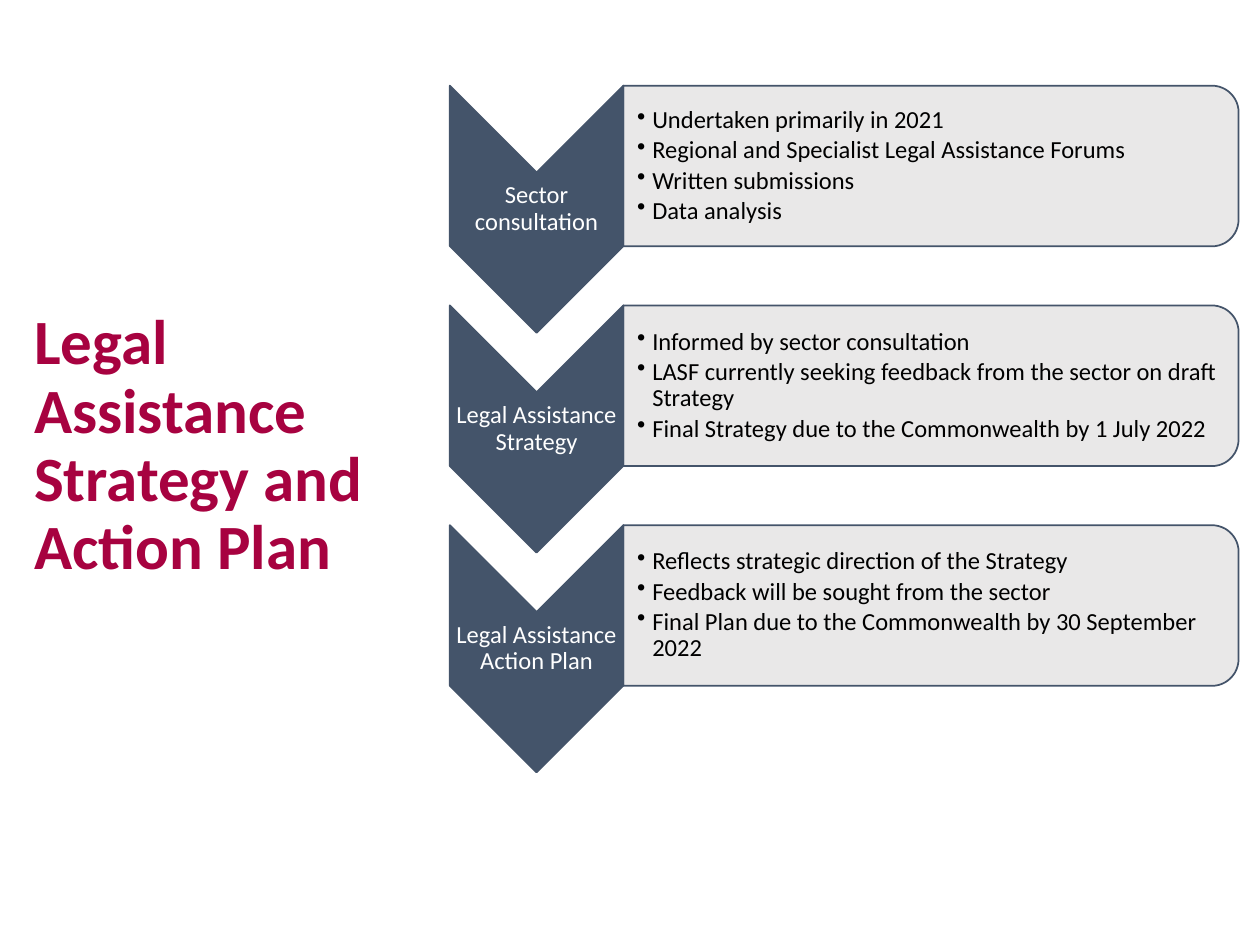
from collections import namedtuple

from lxml.etree import SubElement
from pptx import Presentation
from pptx.dml.color import RGBColor
from pptx.enum.shapes import MSO_SHAPE
from pptx.enum.text import MSO_ANCHOR, PP_ALIGN
from pptx.oxml.ns import qn
from pptx.util import Inches, Pt

COLORS = {
    "title": "A70240",
    "slate": "44546A",
    "panel": "E7E6E6",
    "label": "FFFFFF",
    "body": "000000",
}
FONT = "Calibri"
Box = namedtuple("Box", "left top width height")

STAGES = [
    ("Sector consultation", [
        "Undertaken primarily in 2021",
        "Regional and Specialist Legal Assistance Forums",
        "Written submissions",
        "Data analysis",
    ]),
    ("Legal Assistance Strategy", [
        "Informed by sector consultation",
        "LASF currently seeking feedback from the sector on draft Strategy",
        "Final Strategy due to the Commonwealth by 1 July 2022",
    ]),
    ("Legal Assistance Action Plan", [
        "Reflects strategic direction of the Strategy",
        "Feedback will be sought from the sector",
        "Final Plan due to the Commonwealth by 30 September 2022",
    ]),
]


def inches(box):
    return [Inches(length) for length in box]


def color(name):
    return RGBColor.from_string(COLORS[name])


def format_paragraph(paragraph, size, color_name, bold=False):
    paragraph.line_spacing = 0.9
    for run in paragraph.runs:
        run.font.name = FONT
        run.font.size = Pt(size)
        run.font.bold = bold
        run.font.color.rgb = color(color_name)


def add_quarter_turned(group, preset, box, fill_name):
    turned = Box(
        box.left + (box.width - box.height) / 2,
        box.top + (box.height - box.width) / 2,
        box.height,
        box.width,
    )
    outline = group.shapes.add_shape(preset, *inches(turned))
    outline.rotation = 90
    outline.shadow.inherit = False
    outline.fill.solid()
    outline.fill.fore_color.rgb = color(fill_name)
    outline.line.color.rgb = color("slate")
    outline.line.width = Pt(1)
    return outline


def add_text(group, box, lines, left_inset=0.01):
    frame = group.shapes.add_textbox(*inches(box)).text_frame
    frame.word_wrap = True
    frame.vertical_anchor = MSO_ANCHOR.MIDDLE
    frame.margin_left = Inches(left_inset)
    frame.margin_top = frame.margin_right = frame.margin_bottom = Inches(0.01)
    frame.text = "\n".join(lines)
    return frame.paragraphs


def add_stage_arrow(group, box, stage):
    add_quarter_turned(group, MSO_SHAPE.CHEVRON, box, "slate")
    label_box = box._replace(top=box.top + box.height * 0.35, height=box.height * 0.3)
    for paragraph in add_text(group, label_box, [stage]):
        paragraph.alignment = PP_ALIGN.CENTER
        format_paragraph(paragraph, 14, "label")


def add_stage_panel(group, box, points):
    panel = add_quarter_turned(group, MSO_SHAPE.ROUND_2_SAME_RECTANGLE, box, "panel")
    fill = panel.fill.fore_color._xFill
    SubElement(fill[0], qn("a:alpha"), val="90000")
    points_box = Box(box.left, box.top + 0.06, box.width - 0.06, box.height - 0.12)
    for paragraph in add_text(group, points_box, points, left_inset=0.11):
        paragraph.level = 1
        paragraph.alignment = PP_ALIGN.LEFT
        paragraph.space_after = Pt(2.1)
        format_paragraph(paragraph, 14, "body")
        properties = paragraph._p.get_or_add_pPr()
        properties.set("marL", str(Inches(0.12)))
        properties.set("indent", str(-Inches(0.12)))
        SubElement(properties, qn("a:buChar"), char="•")


def add_stages(slide, box):
    group = slide.shapes.add_group_shape()
    arrow_width = box.width * 0.22
    arrow_height = box.height * 0.36
    pitch = (box.height - arrow_height) / (len(STAGES) - 1)
    for row, (stage, points) in enumerate(STAGES):
        top = box.top + row * pitch
        arrow = Box(box.left, top, arrow_width, arrow_height)
        panel = Box(box.left + arrow_width, top, box.width - arrow_width, arrow_height * 0.65)
        add_stage_panel(group, panel, points)
        add_stage_arrow(group, arrow, stage)


def add_title(slide, box):
    title = slide.shapes.title
    title.left, title.top, title.width, title.height = inches(box)
    frame = title.text_frame
    frame.text = "Legal Assistance Strategy and Action Plan"
    frame.word_wrap = True
    frame.vertical_anchor = MSO_ANCHOR.MIDDLE
    frame.paragraphs[0].alignment = PP_ALIGN.LEFT
    format_paragraph(frame.paragraphs[0], 36, "title", bold=True)


def main():
    presentation = Presentation()
    presentation.slide_width = Inches(10)
    presentation.slide_height = Inches(7.5)
    slide = presentation.slides.add_slide(presentation.slide_layouts[5])
    add_title(slide, Box(0.17, 2.09, 2.97, 2.91))
    add_stages(slide, Box(3.57, 0.68, 6.26, 5.45))
    presentation.save("out.pptx")


if __name__ == "__main__":
    main()
